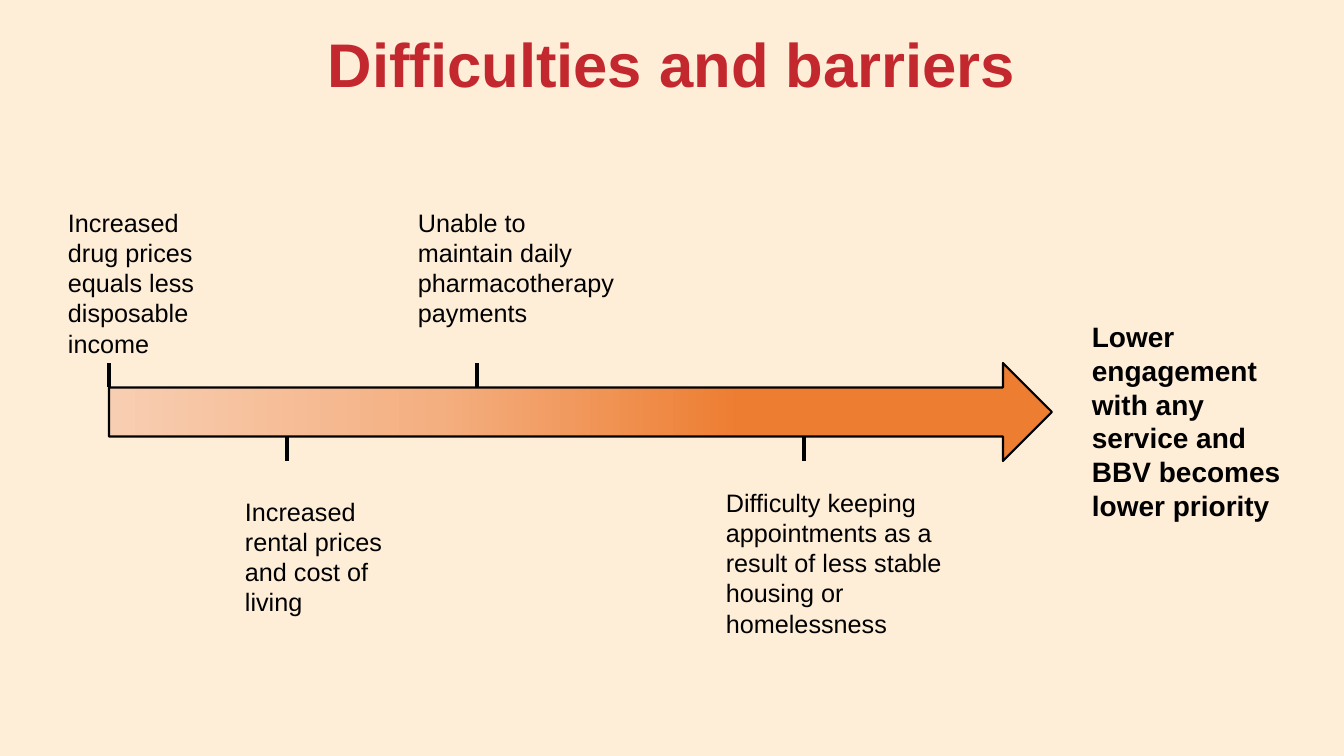
from copy import deepcopy

from lxml.etree import SubElement
from pptx import Presentation
from pptx.dml.color import RGBColor
from pptx.enum.shapes import MSO_CONNECTOR, MSO_SHAPE
from pptx.enum.text import MSO_ANCHOR, MSO_AUTO_SIZE, PP_ALIGN
from pptx.oxml.ns import qn
from pptx.util import Emu, Pt

CREAM = RGBColor(0xFE, 0xEE, 0xD8)
RED = RGBColor(0xC2, 0x28, 0x2D)
BLACK = RGBColor(0, 0, 0)
PEACH = RGBColor(0xF8, 0xCE, 0xB2)
APRICOT = RGBColor(0xF4, 0xAF, 0x80)
ORANGE = RGBColor(0xED, 0x7D, 0x31)

WIDE, HIGH = 1344, 756
LEFT, TOP, LONG, THICK = 109, 363, 943, 98
TICK = 24
STOPS = [(0, PEACH), (0.35, APRICOT), (0.67, ORANGE), (1, ORANGE)]

# text, box, tick x, whether the tick is above the arrow
CAUSES = [
    ("Increased drug prices equals less disposable income",
     (58, 202, 176, 163), 109, True),
    ("Increased rental prices and cost of living",
     (235, 491, 173, 132), 287, False),
    ("Unable to maintain daily pharmacotherapy payments",
     (408, 202, 218, 132), 477, True),
    ("Difficulty keeping appointments as a result of less stable "
     "housing or homelessness",
     (716, 482, 262, 163), 804, False),
]
RESULT = "Lower engagement with any service and BBV becomes lower priority"


def px(n):
    return Emu(round(n * 914400 / 100.8))


def write(frame, text, size=18, color=BLACK, bold=False, align=PP_ALIGN.LEFT):
    frame.word_wrap = True
    para = frame.paragraphs[0]
    para.text = text
    para.alignment = align
    font = para.runs[0].font
    font.name, font.size, font.bold = "Arial", Pt(size), bold
    font.color.rgb = color


def head(slide, text):
    title = slide.shapes.title
    title.left, title.top, title.width, title.height = map(px, (0, 20, WIDE, 86))
    frame = title.text_frame
    frame.auto_size = MSO_AUTO_SIZE.NONE
    frame.vertical_anchor = MSO_ANCHOR.MIDDLE
    frame.margin_left = frame.margin_right = px(4)
    frame.margin_top = frame.margin_bottom = px(4)
    write(frame, text, size=44, color=RED, bold=True, align=PP_ALIGN.CENTER)


def label(slide, text, box, **form):
    frame = slide.shapes.add_textbox(*map(px, box)).text_frame
    write(frame, text, **form)
    frame.auto_size = MSO_AUTO_SIZE.SHAPE_TO_FIT_TEXT


def arrow(slide):
    shape = slide.shapes.add_shape(
        MSO_SHAPE.RIGHT_ARROW, *map(px, (LEFT, TOP, LONG, THICK)))
    shape.shadow.inherit = False
    shape.line.color.rgb = BLACK
    shape.line.width = Pt(1.5)
    fill = shape.fill
    fill.gradient()
    fill.gradient_angle = 0
    stops = shape.element.spPr.find(qn("a:gradFill")).find(qn("a:gsLst"))
    while len(stops) < len(STOPS):
        stops.append(deepcopy(stops[0]))
    for stop, (place, color) in zip(fill.gradient_stops, STOPS):
        stop.position = place
        stop.color.rgb = color


def tick(slide, x, above):
    top = TOP if above else TOP + THICK - TICK
    line = slide.shapes.add_connector(
        MSO_CONNECTOR.STRAIGHT, px(x), px(top + TICK), px(x), px(top))
    line.line.color.rgb = BLACK
    line.line.width = Pt(2.25)
    SubElement(line.element.spPr, qn("a:effectLst"))


def main():
    deck = Presentation()
    deck.slide_width, deck.slide_height = px(WIDE), px(HIGH)
    slide = deck.slides.add_slide(deck.slide_layouts.get_by_name("Title Only"))
    slide.background.fill.solid()
    slide.background.fill.fore_color.rgb = CREAM
    head(slide, "Difficulties and barriers")
    arrow(slide)
    for text, box, x, above in CAUSES:
        label(slide, text, box)
        tick(slide, x, above)
    label(slide, RESULT, (1082, 315, 225, 214), size=20, bold=True)
    deck.save("out.pptx")


if __name__ == "__main__":
    main()
